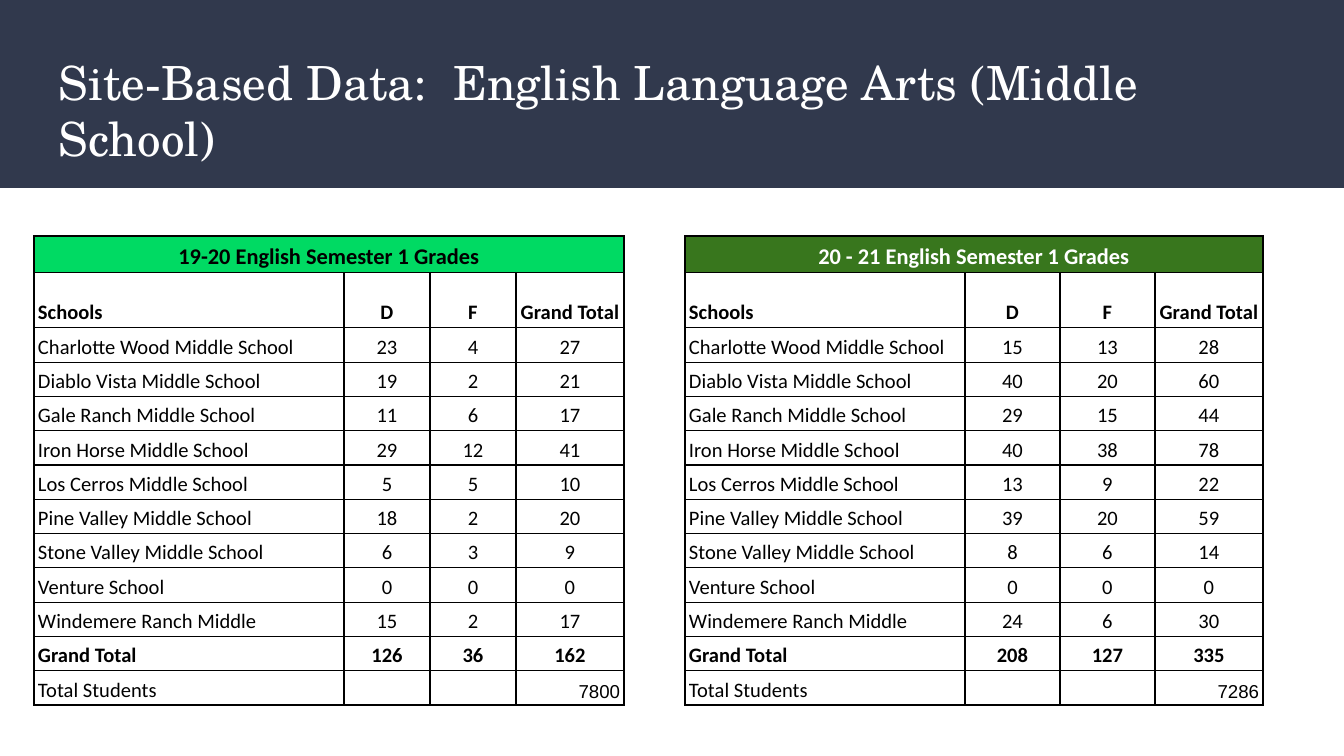
import pptx
import pptx.util
import pptx.dml.color
import pptx.enum.shapes
import pptx.enum.text
import pptx.oxml
import pptx.oxml.ns
from lxml import etree

PX = 914400 / 134.4  # EMU in one px
NAVY = pptx.dml.color.RGBColor(0x31, 0x39, 0x4D)
WHITE = pptx.dml.color.RGBColor(0xFF, 0xFF, 0xFF)
BLACK = pptx.dml.color.RGBColor(0x00, 0x00, 0x00)
BRIGHT_GREEN = pptx.dml.color.RGBColor(0x00, 0xDA, 0x63)
DARK_GREEN = pptx.dml.color.RGBColor(0x38, 0x76, 0x1D)
ALIGN = pptx.enum.text.PP_ALIGN


def px(length):
    return pptx.util.Emu(round(length * PX))


def add_borders(cell):
    properties = cell._tc.get_or_add_tcPr()
    for position, side in enumerate(("a:lnL", "a:lnR", "a:lnT", "a:lnB")):
        line = etree.Element(pptx.oxml.ns.qn(side), w=str(pptx.util.Pt(0.75)))
        fill = etree.SubElement(line, pptx.oxml.ns.qn("a:solidFill"))
        etree.SubElement(fill, pptx.oxml.ns.qn("a:srgbClr"), val=str(BLACK))
        properties.insert(position, line)


presentation = pptx.Presentation()
presentation.slide_width = px(1344)
presentation.slide_height = px(756)
slide = presentation.slides.add_slide(presentation.slide_layouts[6])

# Title band
band = slide.shapes.add_shape(
    pptx.enum.shapes.MSO_SHAPE.RECTANGLE, 0, 0, px(1344), px(188))
band.shadow.inherit = False
band.fill.solid()
band.fill.fore_color.rgb = NAVY
band.line.fill.background()

# Title
title = slide.shapes.add_textbox(px(46), px(40), px(1253), px(91))
frame = title.text_frame
frame.word_wrap = True
frame.margin_left = frame.margin_right = px(13)
frame.margin_top = frame.margin_bottom = px(13)
paragraph = frame.paragraphs[0]
paragraph.text = "Site-Based Data:  English Language Arts (Middle School)"
paragraph.font.name = "TeX Gyre Schola"
paragraph.font.size = pptx.util.Pt(25.2)
paragraph.font.color.rgb = WHITE

# Grades: school, then D, F and total for each year
SCHOOLS = [
    ("Charlotte Wood Middle School", (23, 4, 27), (15, 13, 28)),
    ("Diablo Vista Middle School", (19, 2, 21), (40, 20, 60)),
    ("Gale Ranch Middle School", (11, 6, 17), (29, 15, 44)),
    ("Iron Horse Middle School", (29, 12, 41), (40, 38, 78)),
    ("Los Cerros Middle School", (5, 5, 10), (13, 9, 22)),
    ("Pine Valley Middle School", (18, 2, 20), (39, 20, 59)),
    ("Stone Valley Middle School", (6, 3, 9), (8, 6, 14)),
    ("Venture School", (0, 0, 0), (0, 0, 0)),
    ("Windemere Ranch Middle", (15, 2, 17), (24, 6, 30)),
    ("Grand Total", (126, 36, 162), (208, 127, 335)),
    ("Total Students", ("", "", 7800), ("", "", 7286)),
]
YEARS = [
    ("19-20 English Semester 1 Grades", 34, (310, 86, 86, 108),
     BRIGHT_GREEN, BLACK),
    ("20 - 21 English Semester 1 Grades", 685, (280, 95, 95, 108),
     DARK_GREEN, WHITE),
]
ROW_HEIGHTS = [32, 55] + [31] * len(SCHOOLS)
BOLD_ROWS = (0, 1, len(ROW_HEIGHTS) - 2)
LAST_ROW = len(ROW_HEIGHTS) - 1

# One table for each year
for year, (heading, left, widths, heading_fill, heading_color) in enumerate(YEARS):
    rows = [(heading, "", "", ""), ("Schools", "D", "F", "Grand Total")]
    rows += [(school[0], *school[1 + year]) for school in SCHOOLS]
    table = slide.shapes.add_table(
        len(rows), len(widths), px(left), px(236),
        px(sum(widths)), px(sum(ROW_HEIGHTS))).table
    table.first_row = table.horz_banding = False
    for column, width in zip(table.columns, widths):
        column.width = px(width)
    for row, height in zip(table.rows, ROW_HEIGHTS):
        row.height = px(height)
    table.cell(0, 0).merge(table.cell(0, len(widths) - 1))

    for r, values in enumerate(rows):
        for c, value in enumerate(values):
            cell = table.cell(r, c)
            cell.fill.solid()
            cell.fill.fore_color.rgb = heading_fill if r == 0 else WHITE
            add_borders(cell)
            cell.vertical_anchor = pptx.enum.text.MSO_ANCHOR.BOTTOM
            cell.margin_left = cell.margin_right = px(4)
            cell.margin_top = cell.margin_bottom = px(3)
            student_count = r == LAST_ROW and c == 3
            paragraph = cell.text_frame.paragraphs[0]
            paragraph.text = str(value)
            paragraph.line_spacing = 1.15
            if student_count:
                paragraph.alignment = ALIGN.RIGHT
            elif r == 0 or c > 0:
                paragraph.alignment = ALIGN.CENTER
            else:
                paragraph.alignment = ALIGN.LEFT
            font = paragraph.font
            font.name = "Arial" if student_count else "Calibri"
            font.size = pptx.util.Pt(12 if r == 0 else 10 if student_count else 11)
            font.bold = r in BOLD_ROWS
            font.color.rgb = heading_color if r == 0 else BLACK

presentation.save("out.pptx")
